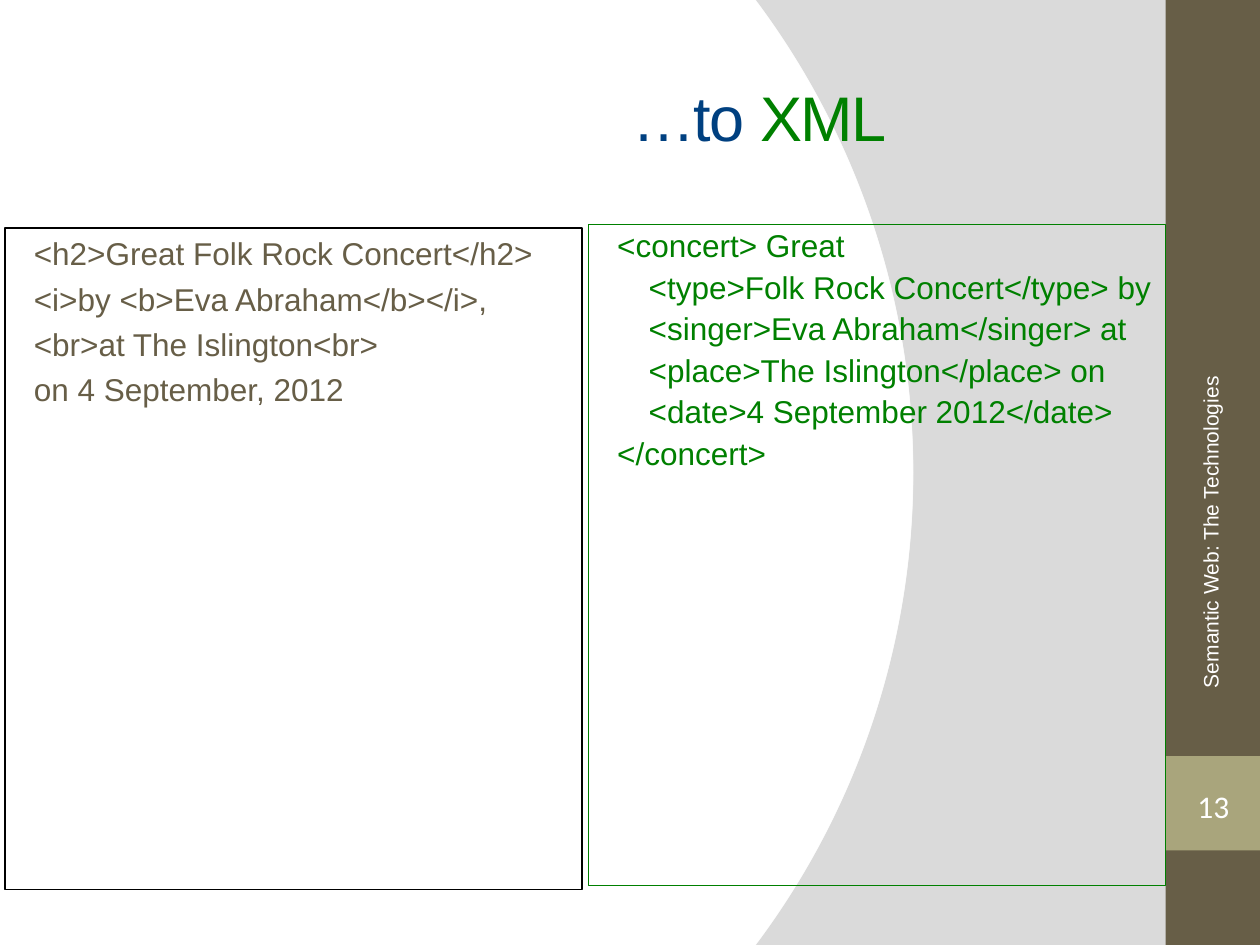
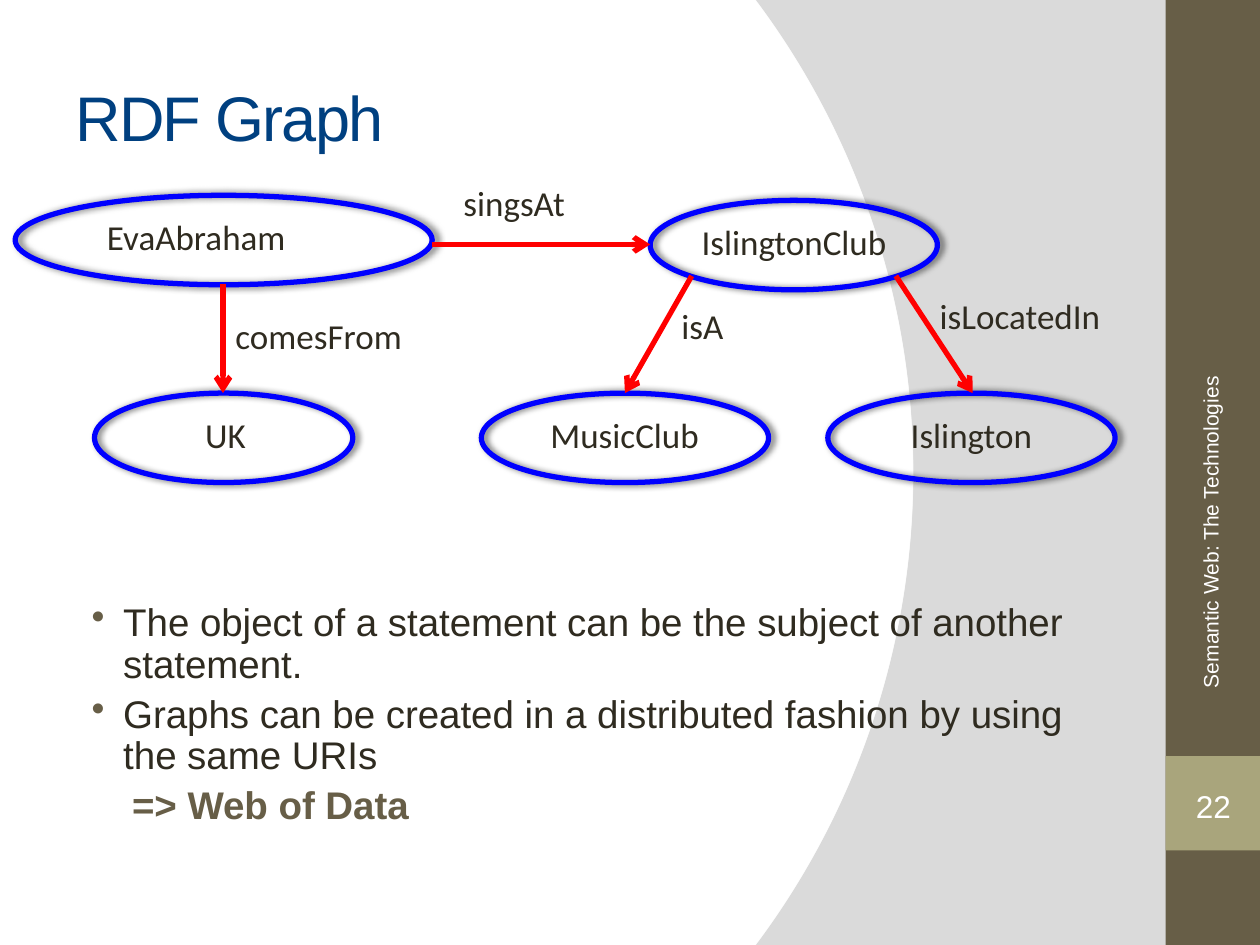
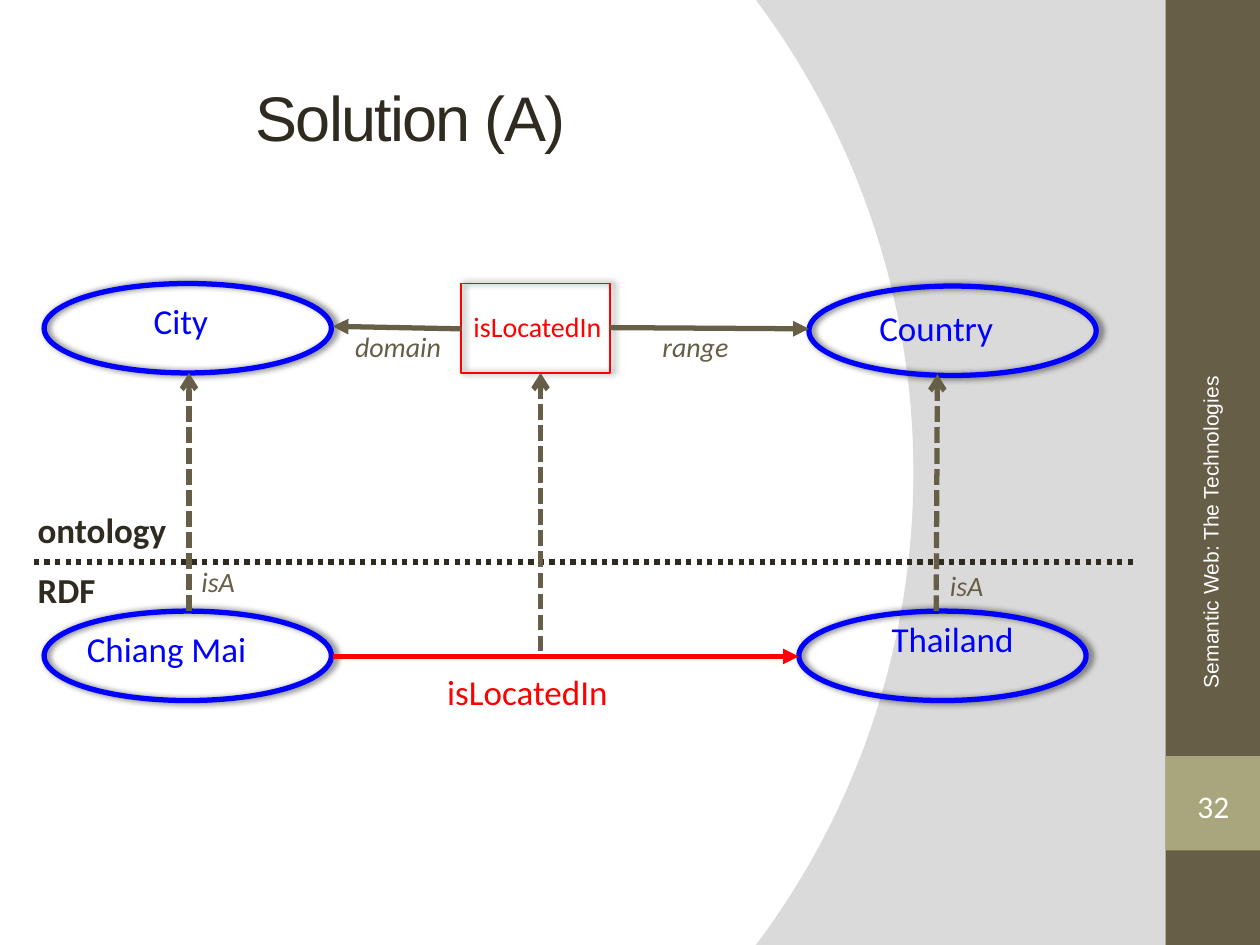
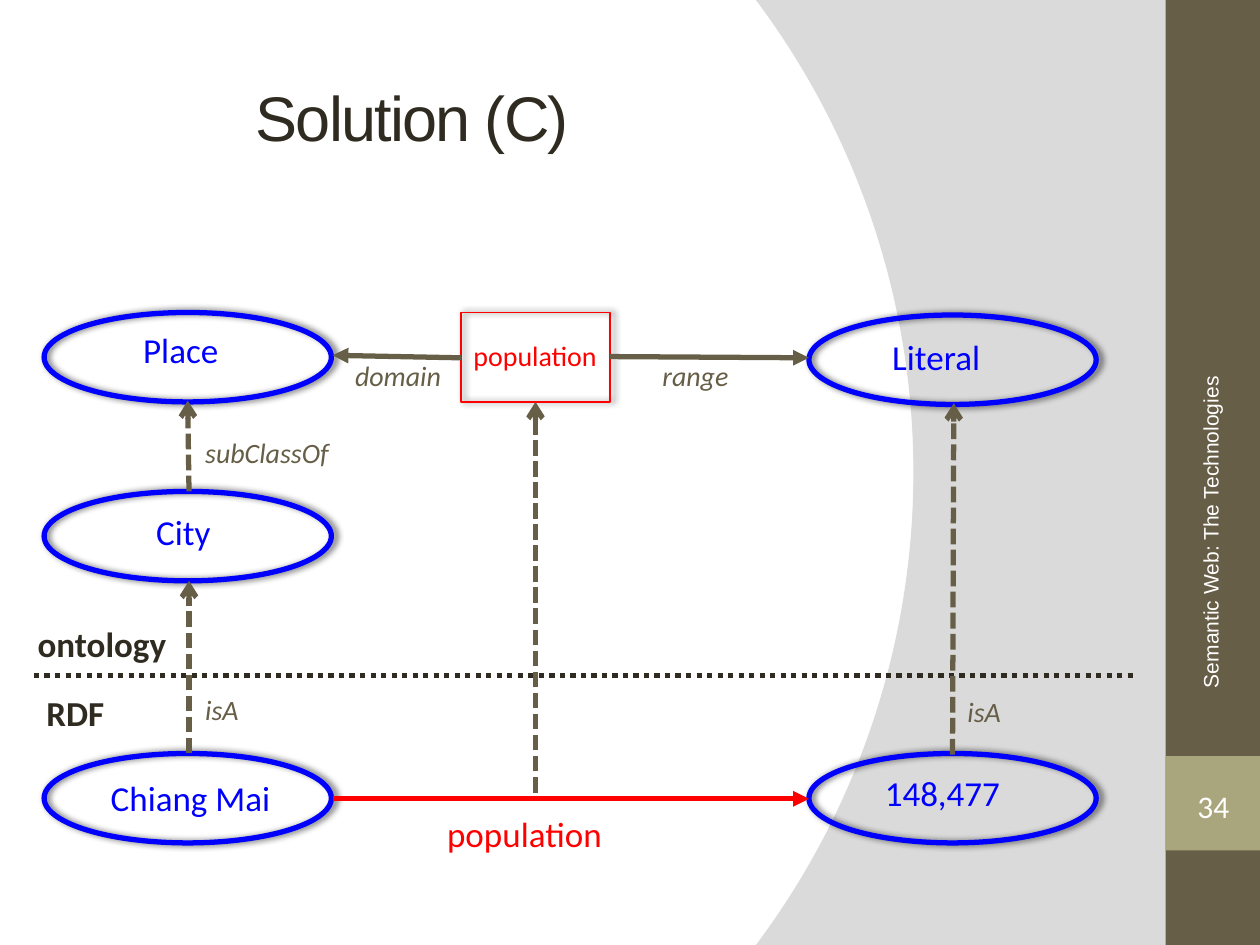
import dataclasses
import typing

import lxml.etree
import pptx
import pptx.dml.color
import pptx.enum.dml
import pptx.enum.shapes
import pptx.enum.text
import pptx.oxml
import pptx.oxml.ns
import pptx.util

Inches = pptx.util.Inches
Pt = pptx.util.Pt
SHAPE = pptx.enum.shapes.MSO_SHAPE
DASHED = pptx.enum.dml.MSO_LINE.SQUARE_DOT
DOTTED = pptx.enum.dml.MSO_LINE.ROUND_DOT
CENTER = pptx.enum.text.PP_ALIGN.CENTER
MIDDLE = pptx.enum.text.MSO_ANCHOR.MIDDLE

# Shared palette and fonts
BROWN, SAND, INK = "675E47", "A9A57C", "2F2B20"
WHITE, GRAY, BLACK = "FFFFFF", "DADADA", "000000"
NAVY, GREEN, BLUE, RED = "004080", "008000", "0000FF", "FF0000"
HEADING_FONT, LABEL_FONT = "Arial", "Calibri"
FOOTER = "Semantic Web: The Technologies"
NODE_WIDTH, NODE_HEIGHT = 2.28, 0.71


class Box(typing.NamedTuple):
    left: float
    top: float
    width: float
    height: float


@dataclasses.dataclass(frozen=True)
class Node:
    left: float
    top: float
    width: float = NODE_WIDTH
    kind: int = SHAPE.OVAL
    color: str = BLUE
    weight: float = 3


@dataclasses.dataclass(frozen=True)
class Arrow:
    start: tuple[float, float]
    end: tuple[float, float]
    color: str = BROWN
    tip: str = "triangle"
    dash: typing.Optional[int] = None


@dataclasses.dataclass(frozen=True)
class Label:
    text: str
    left: float
    top: float
    width: float = 1.57
    size: float = 20
    color: str = INK
    bold: bool = False
    italic: bool = False
    align: typing.Optional[int] = None


@dataclasses.dataclass(frozen=True)
class Solution:
    """A property with its domain and range, above one RDF statement."""
    title: str
    number: str
    prop: str
    domain: str
    range: str
    top: float
    divider: float
    statement_top: float
    object_left: float
    nodes: tuple[Node, ...]
    arrows: tuple[Arrow, ...]
    labels: tuple[Label, ...]


def rgb(value: str):
    return pptx.dml.color.RGBColor.from_string(value)


def xml(markup: str):
    namespace = pptx.oxml.ns.nsdecls("a")
    tag, rest = markup[1:].split(" ", 1) if " " in markup else (markup[1:-2], "/>")
    return pptx.oxml.parse_xml(f"<{tag} {namespace} {rest}")


def place(box: Box) -> list:
    return [Inches(value) for value in box]


# Text
def add_run(paragraph, text: str, *, size: float = 18, font: str = HEADING_FONT,
            color: str = INK, bold: bool = False, italic: bool = False,
            tracking: int = 0) -> None:
    run = paragraph.add_run()
    run.text = text
    run.font.size, run.font.name = Pt(size), font
    run.font.bold, run.font.italic = bold, italic
    run.font.color.rgb = rgb(color)
    if tracking:
        run.font._element.set("spc", str(tracking * 100))


def write(frame, text: str, *, align=None, margin: float = 0, indent: float = 0,
          spacing: typing.Optional[float] = None, before: float = 0,
          bullet: str = "", **run_format):
    """Write one paragraph into a text frame, after any already there."""
    paragraph = frame.paragraphs[0]
    if paragraph.runs:
        paragraph = frame.add_paragraph()
        paragraph.space_before = Pt(before)
    paragraph.alignment = align
    paragraph.line_spacing = spacing
    properties = paragraph._p.get_or_add_pPr()
    properties.set("marL", str(Inches(margin)))
    properties.set("indent", str(Inches(indent)))
    if bullet:
        properties.append(xml(f'<a:buClr ><a:srgbClr val="{BROWN}"/></a:buClr>'))
        properties.append(xml(f'<a:buChar char="{bullet}"/>'))
    add_run(paragraph, text, **run_format)
    return paragraph


def add_frame(slide, box: Box, *, anchor=None, rotation: float = 0):
    area = slide.shapes.add_textbox(*place(box))
    area.rotation = rotation
    area.text_frame.word_wrap = True
    area.text_frame.vertical_anchor = anchor
    return area.text_frame


def add_title(slide, text: str, left: float = 0.5, width: float = 8.33,
              color: str = INK, margin: float = 0):
    frame = add_frame(slide, Box(left, 0.3, width, 1.25), anchor=MIDDLE)
    return write(frame, text, size=36, color=color, tracking=-1, margin=margin)


def draw_label(slide, label: Label) -> None:
    height = 0.44 if label.size == 20 else 0.37
    frame = add_frame(slide, Box(label.left, label.top, label.width, height))
    write(frame, label.text, size=label.size, font=LABEL_FONT, color=label.color,
          bold=label.bold, italic=label.italic, align=label.align)


# Shapes and lines
def add_shape(slide, kind: int, box: Box, *, fill: str = "", line: str = "",
              weight: float = 1):
    shape = slide.shapes.add_shape(kind, *place(box))
    shape.shadow.inherit = False
    if fill:
        shape.fill.solid()
        shape.fill.fore_color.rgb = rgb(fill)
    else:
        shape.fill.background()
    if line:
        shape.line.color.rgb = rgb(line)
        shape.line.width = Pt(weight)
    else:
        shape.line.fill.background()
    return shape


def draw_node(slide, node: Node) -> None:
    shape = add_shape(slide, node.kind, Box(node.left, node.top, node.width, NODE_HEIGHT),
                      line=node.color, weight=node.weight)
    effects = shape._element.spPr.find(pptx.oxml.ns.qn("a:effectLst"))
    effects.append(xml(
        f'<a:outerShdw blurRad="{Pt(4)}" dist="{Pt(2)}" dir="0" rotWithShape="0">'
        f'<a:srgbClr val="{BLACK}"><a:alpha val="60000"/></a:srgbClr></a:outerShdw>'))


def draw_arrow(slide, arrow: Arrow) -> None:
    ends = [Inches(value) for value in (*arrow.start, *arrow.end)]
    line = slide.shapes.add_connector(pptx.enum.shapes.MSO_CONNECTOR.STRAIGHT, *ends)
    line.line.color.rgb = rgb(arrow.color)
    line.line.width = Pt(3)
    if arrow.dash is not None:
        line.line.dash_style = arrow.dash
    if arrow.tip:
        line.line._get_or_add_ln().append(xml(f'<a:tailEnd type="{arrow.tip}"/>'))
    line._element.spPr.append(xml("<a:effectLst/>"))


def draw_graph(slide, nodes, arrows, labels) -> None:
    for node in nodes:
        draw_node(slide, node)
    for arrow in arrows:
        draw_arrow(slide, arrow)
    for label in labels:
        draw_label(slide, label)


# Shared slide design
def set_background(presentation) -> None:
    """Give the master a white disc on gray."""
    fill = presentation.slide_master.background.fill
    fill.solid()
    fill.fore_color.rgb = rgb(WHITE)
    properties = presentation.slide_master._element.cSld.bg.bgPr
    stops = "".join(f'<a:gs pos="{position}"><a:srgbClr val="{color}"/></a:gs>'
                    for position, color in ((0, WHITE), (99900, WHITE), (100000, GRAY)))
    solid = properties.find(pptx.oxml.ns.qn("a:solidFill"))
    properties.replace(solid, xml(
        f'<a:gradFill rotWithShape="1"><a:gsLst>{stops}</a:gsLst><a:path path="circle">'
        '<a:fillToRect l="20000" t="50000" r="100000" b="50000"/></a:path></a:gradFill>'))


def new_slide(presentation, number: str, number_font: str = LABEL_FONT):
    slide = presentation.slides.add_slide(presentation.slide_layouts[6])
    add_shape(slide, SHAPE.RECTANGLE, Box(9.25, 0, 0.75, 7.5), fill=BROWN)
    add_shape(slide, SHAPE.RECTANGLE, Box(9.25, 6, 0.75, 0.75), fill=SAND)
    page = add_shape(slide, SHAPE.DOUBLE_BRACKET, Box(9.33, 6.18, 0.6, 0.43)).text_frame
    page.margin_left = page.margin_right = page.margin_top = page.margin_bottom = 0
    page.vertical_anchor = MIDDLE
    write(page, number, font=number_font, color=WHITE, align=CENTER)
    footer = add_frame(slide, Box(6.85, 2.53, 5.51, 0.55), anchor=MIDDLE, rotation=270)
    write(footer, FOOTER, size=12, color=WHITE)
    return slide


def add_code(slide, box: Box, lines, color: str, border: str, spacing=None) -> None:
    """Bordered code; each line is its text and whether it is nested."""
    frame = add_shape(slide, SHAPE.RECTANGLE, box, line=border, weight=0.75).text_frame
    frame.word_wrap = True
    frame.vertical_anchor = pptx.enum.text.MSO_ANCHOR.TOP
    for text, nested in lines:
        write(frame, text, color=color, align=pptx.enum.text.PP_ALIGN.LEFT,
              margin=0.38, indent=0 if nested else -0.25, spacing=spacing, before=4.3)


# Slides
def build_xml_slide(presentation) -> None:
    slide = new_slide(presentation, "13")
    title = add_title(slide, "…to ", color=NAVY, margin=4.42)
    add_run(title, "XML", size=36, color=GREEN, tracking=-1)
    html = ("<h2>Great Folk Rock Concert</h2>", "<i>by <b>Eva Abraham</b></i>,",
            "<br>at The Islington<br>", "on 4 September, 2012")
    add_code(slide, Box(0.04, 1.81, 4.58, 5.25), [(line, False) for line in html],
             BROWN, BLACK)
    concert = (("<concert> Great", False),
               ("<type>Folk Rock Concert</type> by", True),
               ("<singer>Eva Abraham</singer> at", True),
               ("<place>The Islington</place> on", True),
               ("<date>4 September 2012</date>", True),
               ("</concert>", False))
    add_code(slide, Box(4.67, 1.78, 4.58, 5.25), concert, GREEN, GREEN, spacing=0.9)


def build_rdf_slide(presentation) -> None:
    slide = new_slide(presentation, "22", HEADING_FONT)
    add_title(slide, "RDF Graph", color=NAVY)
    nodes = (Node(0.12, 1.55, 3.31), Node(5.16, 1.59), Node(0.75, 3.12, 2.05),
             Node(3.82, 3.12), Node(6.57, 3.12))
    routes = (((3.43, 1.94), (5.16, 1.94)), ((7.11, 2.19), (7.72, 3.12)),
              ((5.49, 2.19), (4.96, 3.12)), ((1.77, 2.25), (1.77, 3.12)))
    arrows = [Arrow(start, end, RED, "arrow") for start, end in routes]
    labels = (Label("singsAt", 3.58, 1.39), Label("EvaAbraham", 0.75, 1.66, 2.99),
              Label("IslingtonClub", 5.47, 1.7, 2.13), Label("Islington", 7.13, 3.23),
              Label("isLocatedIn", 7.36, 2.29), Label("MusicClub", 4.27, 3.23, 1.76),
              Label("isA", 5.31, 2.37), Label("UK", 1.53, 3.23, 0.79),
              Label("comesFrom", 1.77, 2.45))
    draw_graph(slide, nodes, arrows, labels)

    remarks = add_frame(slide, Box(0.5, 4.74, 8.33, 2.26))
    for text in ("The object of a statement can be the subject of another statement.",
                 "Graphs can be created in a distributed fashion by using the same URIs"):
        write(remarks, text, size=22, margin=0.38, indent=-0.25, spacing=0.9, before=4.8,
              bullet="•")
    write(remarks, "=> Web of Data", size=22, color=BROWN, bold=True, margin=0.45,
          spacing=0.9, before=4.8)


def relation(text: str, left: float, top: float, width: float = 0.94) -> Label:
    return Label(text, left, top, width, size=16, color=BROWN, italic=True)


def term(text: str, left: float, top: float, width: float = 1.65, align=CENTER) -> Label:
    return Label(text, left, top, width, color=BLUE, align=align)


def link(start: tuple[float, float], end: tuple[float, float]) -> Arrow:
    return Arrow(start, end, tip="arrow", dash=DASHED)


def build_solution(presentation, solution: Solution) -> None:
    slide = new_slide(presentation, solution.number)
    add_title(slide, solution.title, left=1.93, width=6.35)
    top, row, divider = solution.top, solution.statement_top, solution.divider
    nodes = (Node(0.35, top), Node(6.42, top + 0.02),
             Node(3.66, top, 1.18, SHAPE.RECTANGLE, RED, 1),
             Node(0.35, row), Node(solution.object_left, row))
    arrows = (Arrow((3.66, top + 0.36), (2.64, top + 0.34)),
              Arrow((4.84, top + 0.35), (6.42, top + 0.36)),
              Arrow((2.64, row + 0.36), (solution.object_left, row + 0.36), RED),
              Arrow((0.27, divider), (9.02, divider), INK, "", DOTTED))
    labels = (term(solution.domain, 0.61, top + 0.08),
              term(solution.range, 6.17, top + 0.13, 2.52),
              Label(solution.prop, 3.66, top + 0.16, 1.26, size=16, color=RED),
              relation("domain", 2.72, top + 0.32), relation("range", 5.16, top + 0.32),
              Label(solution.prop, 3.45, row + 0.42, 1.71, color=RED),
              Label("ontology", 0.2, divider - 0.47, 1.34, bold=True))
    draw_graph(slide, nodes + solution.nodes, arrows + solution.arrows,
               labels + solution.labels)


SOLUTIONS = (
    Solution(
        "Solution (A)", "32", "isLocatedIn", "City", "Country",
        top=2.25, divider=4.46, statement_top=4.85, object_left=6.34,
        nodes=(),
        arrows=(link((1.5, 4.85), (1.5, 2.96)), link((4.29, 5.17), (4.29, 2.96)),
                link((7.43, 4.85), (7.44, 2.97))),
        labels=(term("Chiang Mai", 0.59, 4.93, align=None),
                term("Thailand", 6.5, 4.85, 2.12),
                relation("isA", 1.5, 4.43), relation("isA", 7.44, 4.46, 0.71),
                Label("RDF", 0.2, 4.46, 0.79, bold=True))),
    Solution(
        "Solution (C)", "34", "population", "Place", "Literal",
        top=2.48, divider=5.36, statement_top=5.98, object_left=6.42,
        nodes=(Node(0.35, 3.9),),
        arrows=(link((1.5, 5.98), (1.5, 4.61)), link((1.5, 3.9), (1.49, 3.18)),
                link((4.25, 6.29), (4.25, 3.19)), link((7.56, 5.99), (7.57, 3.2))),
        labels=(term("Chiang Mai", 0.78, 6.11, align=None),
                term("148,477", 6.42, 6.07, 2.12), term("City", 0.63, 4),
                relation("subClassOf", 1.53, 3.41, 1.65),
                relation("isA", 1.53, 5.45), relation("isA", 7.58, 5.46, 0.71),
                Label("RDF", 0.27, 5.44, 0.79, bold=True))),
)


def main() -> None:
    presentation = pptx.Presentation()
    presentation.slide_width, presentation.slide_height = Inches(10), Inches(7.5)
    set_background(presentation)
    build_xml_slide(presentation)
    build_rdf_slide(presentation)
    for solution in SOLUTIONS:
        build_solution(presentation, solution)
    presentation.save("out.pptx")


if __name__ == "__main__":
    main()
